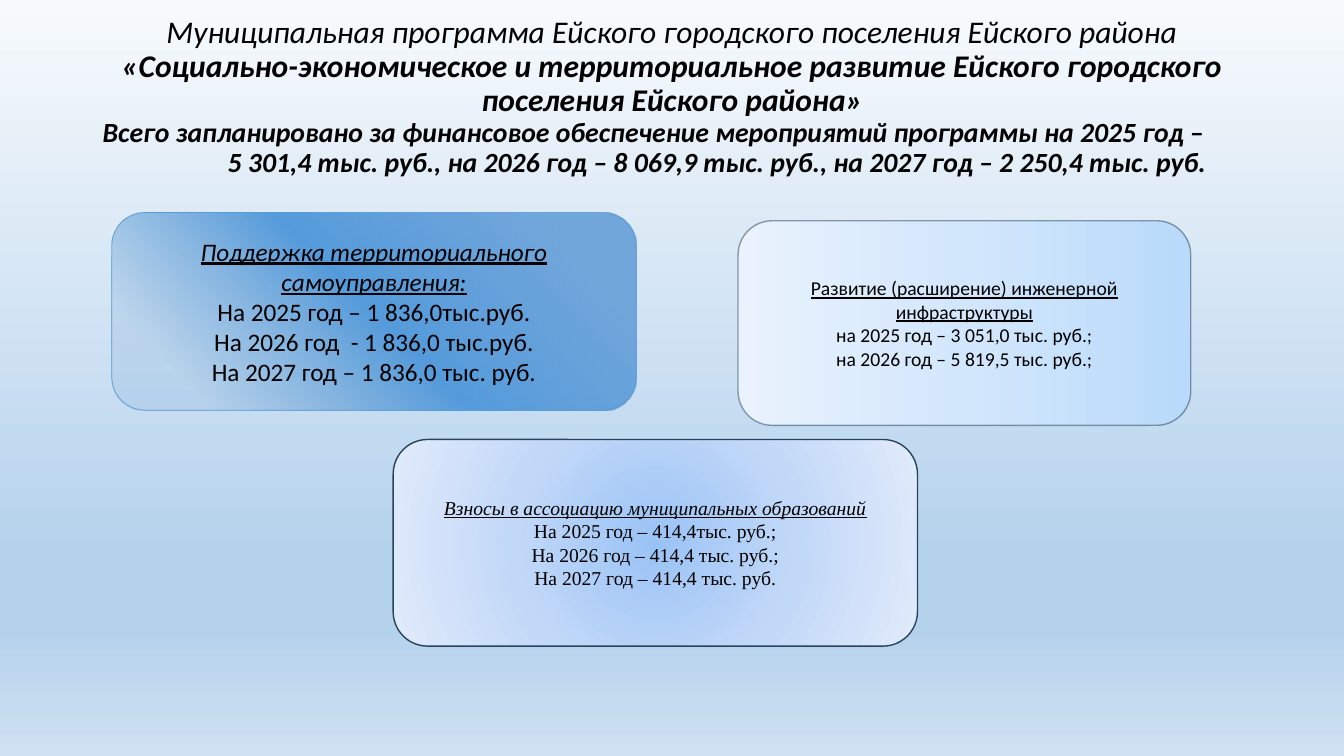
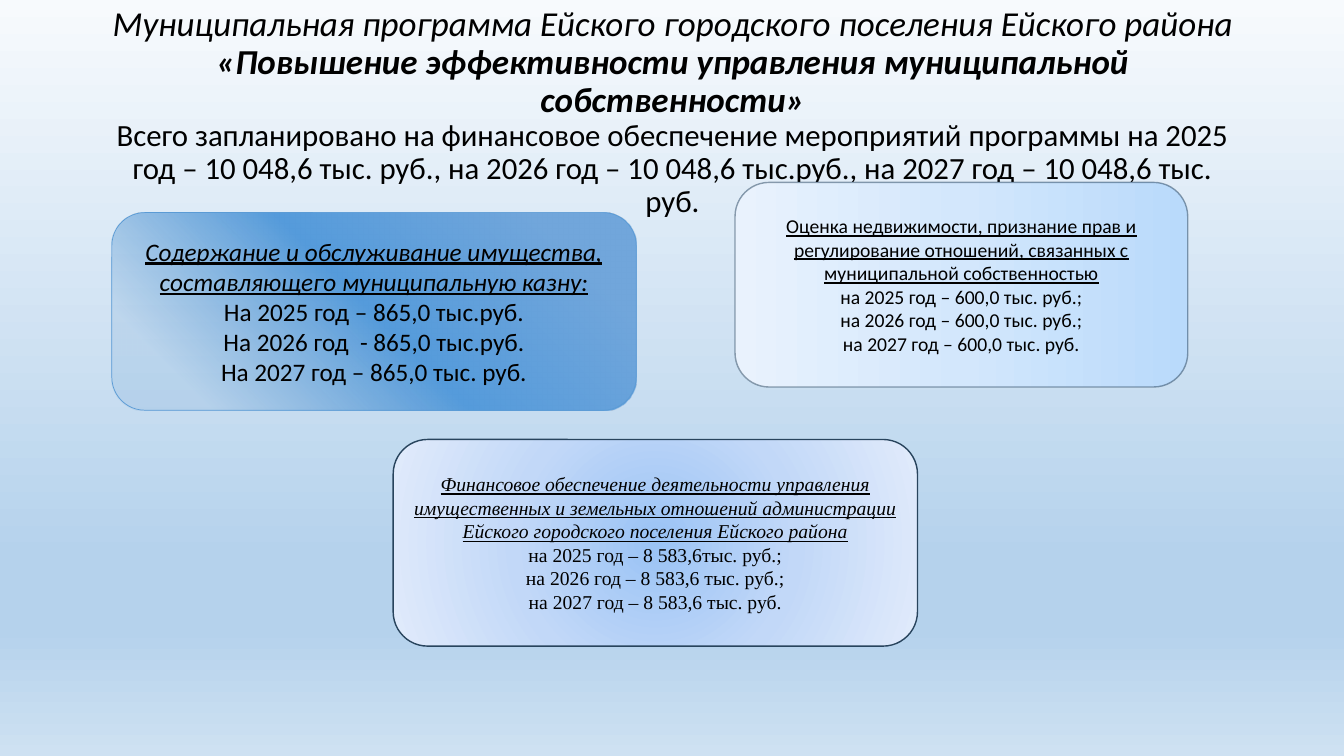
import pptx
import pptx.dml.color
import pptx.enum.shapes
import pptx.enum.text
import pptx.oxml.ns
import pptx.util
from lxml import etree

Inches = pptx.util.Inches
Pt = pptx.util.Pt
RGBColor = pptx.dml.color.RGBColor
qn = pptx.oxml.ns.qn
ALIGN = pptx.enum.text.PP_ALIGN
MIDDLE = pptx.enum.text.MSO_ANCHOR.MIDDLE

BLACK = RGBColor(0x00, 0x00, 0x00)
SKY_TOP = RGBColor(0xF7, 0xFA, 0xFD)
SKY_MIDDLE = RGBColor(0xB5, 0xD2, 0xEC)
SKY_BOTTOM = RGBColor(0xCE, 0xE1, 0xF2)
BLUE_LIGHT = RGBColor(0x71, 0xA6, 0xDB)
BLUE_BRIGHT = RGBColor(0x55, 0x9B, 0xDB)
BLUE_FADE = RGBColor(0x5B, 0x98, 0xD0)
BLUE_LINE = RGBColor(0x5B, 0x9B, 0xD5)
PALE_DEEP = RGBColor(0xB9, 0xDA, 0xFB)
PALE_MIDDLE = RGBColor(0xD3, 0xE7, 0xFC)
PALE_LIGHT = RGBColor(0xE9, 0xF2, 0xFD)
GLOW_CENTER = RGBColor(0x9A, 0xC3, 0xF5)
GLOW_MIDDLE = RGBColor(0xC2, 0xD8, 0xF8)
GLOW_EDGE = RGBColor(0xE1, 0xEB, 0xFB)
NAVY_LINE = RGBColor(0x28, 0x44, 0x5D)

# Gradient stops: position in percent, colour, opacity in percent
BACKGROUND = {
    "stops": [(0, SKY_TOP, 100), (74, SKY_MIDDLE, 100), (83, SKY_MIDDLE, 100), (100, SKY_BOTTOM, 100)],
    "angle": 90,
}
CARD_STYLES = {
    "blue": {
        "gradient": {
            "stops": [(15, BLUE_LIGHT, 100), (50, BLUE_BRIGHT, 100), (86, BLUE_FADE, 16)],
            "focus": (100, 0, 0, 100),
        },
        "line": (BLUE_LINE, 0.5, 100),
        "font": {"name": "Calibri", "size": Pt(18)},
        "heading": {"italic": True, "underline": True},
    },
    "pale": {
        "gradient": {
            "stops": [(0, PALE_DEEP, 100), (50, PALE_MIDDLE, 100), (100, PALE_LIGHT, 100)],
            "angle": 180,
        },
        "line": (NAVY_LINE, 1, 49),
        "font": {"name": "Calibri", "size": Pt(14)},
        "heading": {"underline": True},
    },
    "glow": {
        "gradient": {
            "stops": [(0, GLOW_CENTER, 100), (50, GLOW_MIDDLE, 100), (100, GLOW_EDGE, 100)],
            "focus": (50, 50, 50, 50),
        },
        "line": (NAVY_LINE, 1, 100),
        "font": {"name": "Times New Roman", "size": Pt(14)},
        "heading": {"italic": True, "underline": True},
    },
}

TITLE_BOX = (0.92, 0.14, 11.5, 1.96)
BLUE_BOX = (1.11, 2.11, 5.2, 1.96)
GLOW_BOX = (3.9, 4.36, 5.2, 2.05)
PROGRAM_PREFIX = "Муниципальная программа Ейского городского поселения Ейского района "

SLIDES = [
    {
        "program": "«Социально-экономическое и территориальное развитие Ейского городского поселения Ейского района»",
        "total": "Всего запланировано за финансовое обеспечение мероприятий программы на 2025 год –\v"
                 "5 301,4 тыс. руб., на 2026 год – 8 069,9 тыс. руб., на 2027 год – 2 250,4 тыс. руб.",
        "title_size": 22.5,
        "total_font": {"size": Pt(19.8), "bold": True, "italic": True},
        "total_alignment": ALIGN.LEFT,
        "hanging": 1.24,
        "bottom_margin": 0.35,
        "cards": [
            ("blue", BLUE_BOX, [
                "Поддержка территориального самоуправления:",
                "На 2025 год – 1 836,0тыс.руб.",
                "На 2026 год  - 1 836,0 тыс.руб.",
                "На 2027 год – 1 836,0 тыс. руб.",
            ]),
            ("pale", (7.32, 2.19, 4.49, 2.03), [
                "Развитие (расширение) инженерной инфраструктуры",
                "на 2025 год – 3 051,0 тыс. руб.;",
                "на 2026 год – 5 819,5 тыс. руб.;",
            ]),
            ("glow", GLOW_BOX, [
                "Взносы в ассоциацию муниципальных образований",
                "На 2025 год – 414,4тыс. руб.;",
                "На 2026 год – 414,4 тыс. руб.;",
                "На 2027 год – 414,4 тыс. руб.",
            ]),
        ],
    },
    {
        "program": "«Повышение эффективности управления муниципальной собственности»",
        "total": "Всего запланировано на финансовое обеспечение мероприятий программы на 2025 год – "
                 "10 048,6 тыс. руб., на 2026 год – 10 048,6 тыс.руб., на 2027 год – 10 048,6 тыс. руб.",
        "title_size": 25,
        "total_font": {"size": Pt(22)},
        "total_alignment": ALIGN.CENTER,
        "hanging": 0,
        "bottom_margin": 0.05,
        "cards": [
            ("blue", BLUE_BOX, [
                "Содержание и обслуживание имущества, составляющего муниципальную казну:",
                "На 2025 год – 865,0 тыс.руб.",
                "На 2026 год  - 865,0 тыс.руб.",
                "На 2027 год – 865,0 тыс. руб.",
            ]),
            ("pale", (7.29, 1.81, 4.49, 2.03), [
                "Оценка недвижимости, признание прав и регулирование отношений, "
                "связанных с муниципальной собственностью",
                "на 2025 год – 600,0 тыс. руб.;",
                "на 2026 год – 600,0 тыс. руб.;",
                "на 2027 год – 600,0 тыс. руб.",
            ]),
            ("glow", GLOW_BOX, [
                "Финансовое обеспечение деятельности управления имущественных и земельных отношений "
                "администрации Ейского городского поселения Ейского района",
                "на 2025 год – 8 583,6тыс. руб.;",
                "на 2026 год – 8 583,6 тыс. руб.;",
                "на 2027 год – 8 583,6 тыс. руб.",
            ]),
        ],
    },
]


def set_format(target, values):
    for name, value in values.items():
        setattr(target, name, value)


def set_font(font, values):
    set_format(font, values)
    font.color.rgb = BLACK


def add_opacity(color_element, percent):
    if percent < 100:
        etree.SubElement(color_element, qn("a:alpha"), val=str(percent * 1000))


def apply_gradient(fill, owner, stops, angle=None, focus=None):
    """Fill owner's element with a linear gradient (angle) or a circular one (focus)."""
    fill.gradient()
    gradient = owner.element.find(".//" + qn("a:gradFill"))
    for child in list(gradient):
        gradient.remove(child)
    stop_list = etree.SubElement(gradient, qn("a:gsLst"))
    for position, color, opacity in stops:
        stop = etree.SubElement(stop_list, qn("a:gs"), pos=str(position * 1000))
        add_opacity(etree.SubElement(stop, qn("a:srgbClr"), val=str(color)), opacity)
    if focus is None:
        etree.SubElement(gradient, qn("a:lin"), ang=str(angle * 60000), scaled="0")
    else:
        circle = etree.SubElement(gradient, qn("a:path"), {"path": "circle"})
        edges = {side: str(value * 1000) for side, value in zip("ltrb", focus)}
        etree.SubElement(circle, qn("a:fillToRect"), edges)


def add_title(slide, content):
    frame = slide.shapes.add_textbox(*map(Inches, TITLE_BOX)).text_frame
    set_format(frame, {
        "word_wrap": True,
        "vertical_anchor": MIDDLE,
        "margin_bottom": Inches(content["bottom_margin"]),
    })
    name_paragraph = frame.paragraphs[0]
    name_paragraph.alignment = ALIGN.CENTER
    for text, bold in ((PROGRAM_PREFIX, False), (content["program"], True)):
        run = name_paragraph.add_run()
        run.text = text
        set_font(run.font, {
            "name": "Calibri", "size": Pt(content["title_size"]), "italic": True, "bold": bold,
        })
    total_paragraph = frame.add_paragraph()
    total_paragraph.text = content["total"]
    total_paragraph.alignment = content["total_alignment"]
    for run in total_paragraph.runs:
        set_font(run.font, {"name": "Calibri", **content["total_font"]})
    if content["hanging"]:
        indent = Inches(content["hanging"])
        properties = total_paragraph._p.get_or_add_pPr()
        properties.set("marL", str(indent))
        properties.set("indent", str(-indent))
    for paragraph in frame.paragraphs:
        paragraph.line_spacing = 0.9


def add_card(slide, style_name, box, lines):
    style = CARD_STYLES[style_name]
    card = slide.shapes.add_shape(
        pptx.enum.shapes.MSO_SHAPE.ROUNDED_RECTANGLE, *map(Inches, box))
    card.shadow.inherit = False
    apply_gradient(card.fill, card, **style["gradient"])
    line_color, line_width, line_opacity = style["line"]
    card.line.color.rgb = line_color
    card.line.width = Pt(line_width)
    add_opacity(card.element.find(".//" + qn("a:ln") + "//" + qn("a:srgbClr")), line_opacity)
    frame = card.text_frame
    set_format(frame, {"word_wrap": True, "vertical_anchor": MIDDLE})
    for index, text in enumerate(lines):
        paragraph = frame.add_paragraph() if index else frame.paragraphs[0]
        paragraph.alignment = ALIGN.CENTER
        run = paragraph.add_run()
        run.text = text
        set_font(run.font, style["font"] if index else {**style["font"], **style["heading"]})


def main():
    presentation = pptx.Presentation()
    presentation.slide_width = Inches(13.33)
    presentation.slide_height = Inches(7.5)
    for content in SLIDES:
        slide = presentation.slides.add_slide(presentation.slide_layouts[6])
        apply_gradient(slide.background.fill, slide, **BACKGROUND)
        add_title(slide, content)
        for style_name, box, lines in content["cards"]:
            add_card(slide, style_name, box, lines)
    presentation.save("out.pptx")


if __name__ == "__main__":
    main()
